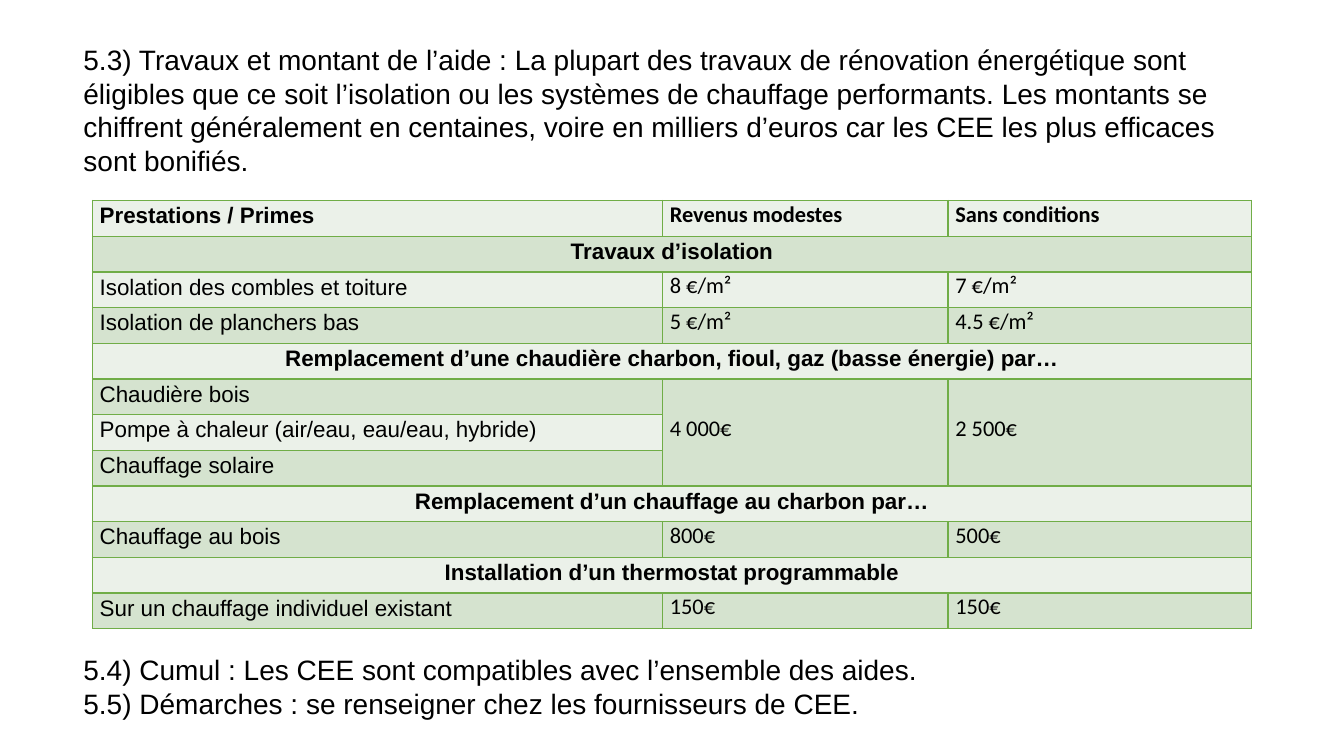
from dataclasses import dataclass
from lxml.etree import SubElement as Sub
from pptx import Presentation
from pptx.dml.color import RGBColor as Rgb
from pptx.enum.text import MSO_ANCHOR as Anchor, PP_ALIGN as Align
from pptx.oxml.ns import qn
from pptx.util import Pt

PX = 9525


@dataclass(frozen=True)
class Theme:
    """Colours, fonts and sizes of the slide."""
    ink: str = "000000"
    rule: str = "70AD47"
    bands: tuple = ("EBF1E9", "D5E3CF")
    main: str = "Arial"
    value: str = "Calibri"
    text: int = 20
    cell: int = 16
    lead: float = 14.4
    after: int = 8
    line: int = 1


T = Theme()
INTRO = [
    "5.3) Travaux et montant de l’aide : La plupart des travaux de rénovation "
    "énergétique sont éligibles que ce soit l’isolation ou les systèmes de "
    "chauffage performants. Les montants se chiffrent généralement en centaines, "
    "voire en milliers d’euros car les CEE les plus efficaces sont bonifiés."]
NOTES = [
    "5.4) Cumul : Les CEE sont compatibles avec l’ensemble des aides.",
    "5.5) Démarches : se renseigner chez les fournisseurs de CEE."]
COLS = [543, 272, 289]
ROWS = [
    ("Prestations / Primes", "Revenus modestes", "Sans conditions"),
    ("Travaux d’isolation",),
    ("Isolation des combles et toiture", "8 €/m²", "7 €/m²"),
    ("Isolation de planchers bas", "5 €/m²", "4.5 €/m²"),
    ("Remplacement d’une chaudière charbon, fioul, gaz (basse énergie) par…",),
    ("Chaudière bois", "4 000€", "2 500€"),
    ("Pompe à chaleur (air/eau, eau/eau, hybride)", "", ""),
    ("Chauffage solaire", "", ""),
    ("Remplacement d’un chauffage au charbon par…",),
    ("Chauffage au bois", "800€", "500€"),
    ("Installation d’un thermostat programmable",),
    ("Sur un chauffage individuel existant", "150€", "150€"),
]
BOILER = (5, 7)


def scale(box):
    """Turn a box in px into EMU."""
    return [n * PX for n in box]


def style(font, name, size, bold=False):
    """Set the face, size, weight and ink of a font."""
    font.name, font.size, font.bold = name, Pt(size), bold
    font.color.rgb = Rgb.from_string(T.ink)


def add_text(slide, box, lines):
    """Place a block of paragraphs in the box."""
    frame = slide.shapes.add_textbox(*scale(box)).text_frame
    frame.word_wrap = True
    frame.text = "\n".join(lines)
    for para in frame.paragraphs:
        style(para.font, T.main, T.text)


def frame_cell(cell):
    """Draw the four borders of a cell."""
    props = cell._tc.get_or_add_tcPr()
    for side in ("lnL", "lnR", "lnT", "lnB"):
        line = Sub(props, qn(f"a:{side}"), w=str(Pt(T.line)))
        Sub(Sub(line, qn("a:solidFill")), qn("a:srgbClr"), val=T.rule)


def fill_cell(cell, text, band, face, bold, align):
    """Write and format one cell."""
    frame_cell(cell)
    cell.fill.solid()
    cell.fill.fore_color.rgb = Rgb.from_string(band)
    cell.margin_left = cell.margin_right = 7 * PX
    cell.margin_top = cell.margin_bottom = 0
    cell.vertical_anchor = Anchor.MIDDLE
    cell.text = text
    para = cell.text_frame.paragraphs[0]
    para.alignment = align
    para.line_spacing, para.space_after = Pt(T.lead), Pt(T.after)
    style(para.font, face, T.cell, bold)


def add_grid(slide, box):
    """Place the table of grants in the box."""
    grid = slide.shapes.add_table(len(ROWS), len(COLS), *scale(box)).table
    grid.first_row = grid.horz_banding = False
    for col, width in zip(grid.columns, COLS):
        col.width = width * PX
    for r, row in enumerate(ROWS):
        head = len(row) == 1
        texts = row + ("",) * (len(COLS) - len(row))
        for c, text in enumerate(texts):
            face = T.value if c else T.main
            band = T.bands[BOILER[0] % 2 if c and BOILER[0] <= r <= BOILER[1] else r % 2]
            fill_cell(grid.cell(r, c), text, band, face, head or r == 0,
                      Align.CENTER if head else Align.LEFT)
        if head:
            grid.cell(r, 0).merge(grid.cell(r, len(COLS) - 1))
    for c in range(1, len(COLS)):
        grid.cell(BOILER[0], c).merge(grid.cell(BOILER[1], c))


def main():
    """Build the slide and save it."""
    deck = Presentation()
    deck.slide_width, deck.slide_height = scale((1280, 720))
    slide = deck.slides.add_slide(deck.slide_layouts[6])
    add_text(slide, (70, 36, 1140, 139), INTRO)
    add_grid(slide, (88, 191, sum(COLS), 34 * len(ROWS)))
    add_text(slide, (70, 617, 1104, 74), NOTES)
    deck.save("out.pptx")


if __name__ == "__main__":
    main()
